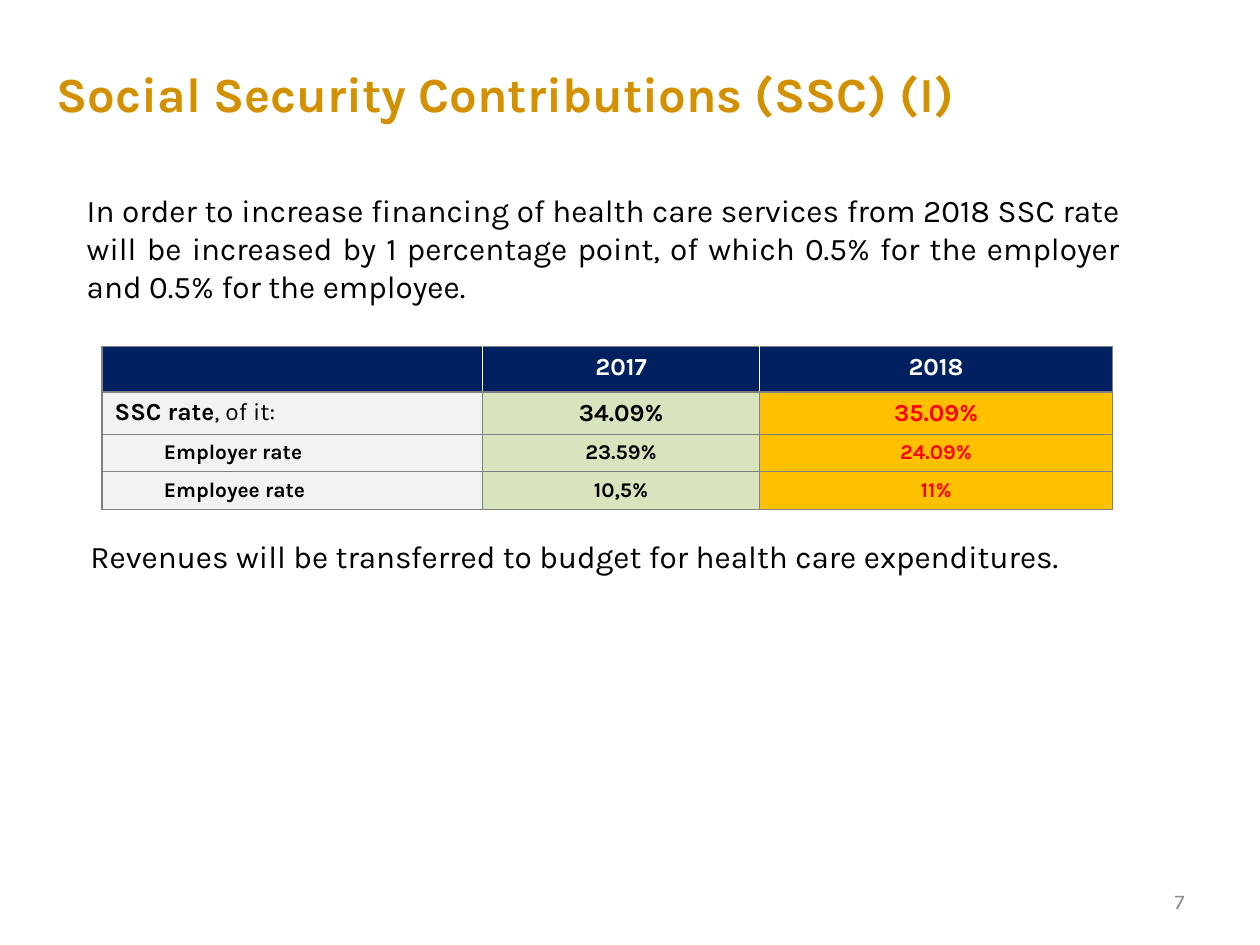
from dataclasses import dataclass

from lxml.etree import SubElement
from pptx import Presentation
from pptx.dml.color import RGBColor
from pptx.enum.text import MSO_ANCHOR, MSO_AUTO_SIZE, PP_ALIGN
from pptx.oxml.ns import qn
from pptx.util import Inches, Pt


@dataclass(frozen=True)
class Theme:
    font: str = "Karla"
    white: str = "FFFFFF"
    black: str = "000000"
    gold: str = "D39001"
    navy: str = "002060"
    label_fill: str = "F2F2F2"
    old_fill: str = "D7E4BD"
    new_fill: str = "FFC000"
    red: str = "FF0000"
    grid: str = "808080"
    page: str = "8C8C8C"
    title_size: int = 28
    body_size: int = 18
    main_size: int = 14
    detail_size: int = 12


T = Theme()


def rgb(color):
    return RGBColor.from_string(color)


def add_run(p, text, size, color, bold=False):
    r = p.add_run()
    r.text = text
    r.font.name, r.font.size, r.font.bold = T.font, Pt(size), bold
    r.font.color.rgb = rgb(color)


def add_title(s, box, text):
    sp = s.shapes.title
    sp.left, sp.top, sp.width, sp.height = map(Inches, box)
    sp.fill.solid()
    sp.fill.fore_color.rgb = rgb(T.white)
    tf = sp.text_frame
    tf.auto_size = MSO_AUTO_SIZE.NONE
    tf.word_wrap = True
    tf.vertical_anchor = MSO_ANCHOR.MIDDLE
    p = tf.paragraphs[0]
    p.alignment = PP_ALIGN.LEFT
    add_run(p, text, T.title_size, T.gold, True)


def add_text(s, box, text, size, color, align, anchor=MSO_ANCHOR.TOP):
    tf = s.shapes.add_textbox(*map(Inches, box)).text_frame
    tf.word_wrap = True
    tf.vertical_anchor = anchor
    p = tf.paragraphs[0]
    p.alignment = align
    add_run(p, text, size, color)


def set_borders(cell, colors, widths):
    """Draw left, right, top and bottom edges, in that order."""
    tcPr = cell._tc.get_or_add_tcPr()
    for i, (side, color, width) in enumerate(zip("LRTB", colors, widths)):
        ln = tcPr.makeelement(qn(f"a:ln{side}"), {"w": str(Pt(width))})
        SubElement(SubElement(ln, qn("a:solidFill")), qn("a:srgbClr"), val=color)
        tcPr.insert(i, ln)


def add_rate_table(s, box, col_widths, row_heights, rows):
    frame = s.shapes.add_table(len(rows), len(col_widths), *map(Inches, box))
    table = frame.table
    table.first_row = table.horz_banding = False
    for col, width in zip(table.columns, col_widths):
        col.width = Inches(width)
    for row, height in zip(table.rows, row_heights):
        row.height = Inches(height)

    body_fills = (T.label_fill, T.old_fill, T.new_fill)
    body_colors = (T.black, T.black, T.red)
    last = len(col_widths) - 1
    for i, (size, values) in enumerate(rows):
        header = i == 0
        for j, value in enumerate(values):
            cell = table.cell(i, j)
            cell.fill.solid()
            cell.fill.fore_color.rgb = rgb(T.navy if header else body_fills[j])
            color = T.white if header else body_colors[j]
            p = cell.text_frame.paragraphs[0]
            if j:
                p.alignment = PP_ALIGN.CENTER
                if not header:
                    cell.vertical_anchor = MSO_ANCHOR.MIDDLE
            elif i > 1:
                # Detail labels are indented under the total
                p._p.get_or_add_pPr().set("marL", str(Inches(0.39)))
            for text, bold in value:
                add_run(p, text, size, color, bold)
            if not value:
                SubElement(p._p, qn("a:endParaRPr"), sz=str(size * 100))
            # White dividers between the header cells, grey lines elsewhere
            left = T.white if header and j > 0 else T.grid
            right = T.white if header and j < last else T.grid
            set_borders(cell, (left, right, T.grid, T.grid),
                        (1, 1, 1 if i < 2 else 0.5, 1 if header else 0.5))


def bold(*texts):
    return [[(text, True)] for text in texts]


def build_slide(prs):
    s = prs.slides.add_slide(prs.slide_layouts[5])

    # Page number
    add_text(s, (7.17, 6.95, 2.33, 0.4), "7", T.detail_size, T.page,
             PP_ALIGN.RIGHT, MSO_ANCHOR.MIDDLE)

    # Title
    add_title(s, (0.35, 0.41, 7.32, 0.66), "Social Security Contributions (SSC) (I)")

    # Contribution rates
    rows = [
        (T.main_size, [[], *bold("2017", "2018")]),
        (T.main_size, [[("SSC rate", True), (", of it:", False)],
                       *bold("34.09%", "35.09%")]),
        (T.detail_size, bold("Employer rate", "23.59%", "24.09%")),
        (T.detail_size, bold("Employee rate", "10,5%", "11%")),
    ]
    add_rate_table(s, (0.81, 2.75, 8.02, 1.29), (3.02, 2.2, 2.8),
                   (0.36, 0.33, 0.3, 0.3), rows)

    # Statements above and below the table
    statements = [
        ((0.59, 1.47, 8.4, 1.01),
         "In order to increase financing of health care services from 2018 SSC rate "
         "will be increased by 1 percentage point, of which 0.5% for the employer "
         "and 0.5% for the employee."),
        ((0.62, 4.21, 8.4, 0.4),
         "Revenues will be transferred to budget for health care expenditures."),
    ]
    for box, text in statements:
        add_text(s, box, text, T.body_size, T.black, PP_ALIGN.JUSTIFY)


def main():
    prs = Presentation()
    prs.slide_width, prs.slide_height = Inches(10), Inches(7.5)
    build_slide(prs)
    prs.save("out.pptx")


if __name__ == "__main__":
    main()
